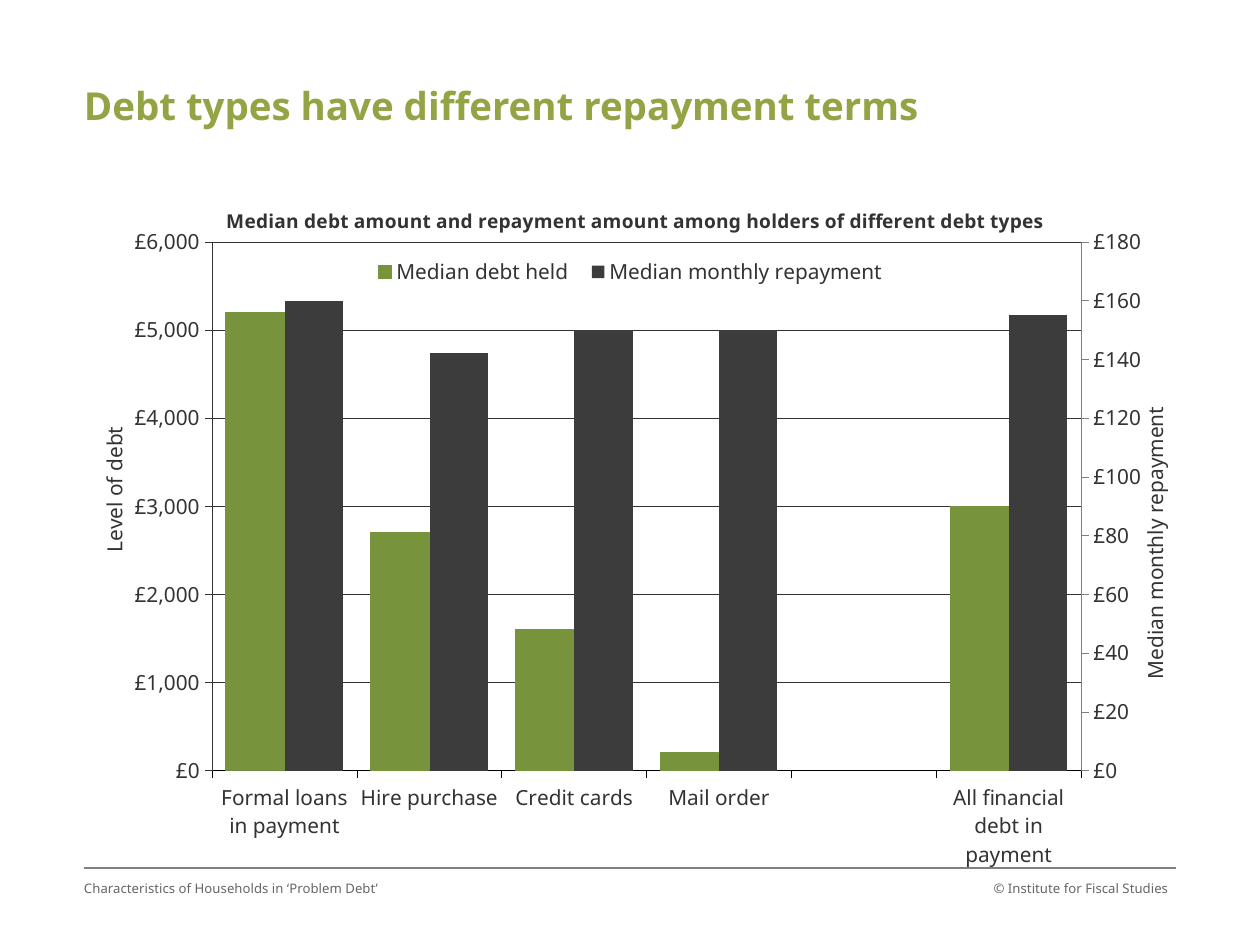
from copy import deepcopy
from dataclasses import dataclass

from lxml import etree
from pptx import Presentation
from pptx import util as u
from pptx.chart.data import CategoryChartData
from pptx.dml.color import RGBColor
from pptx.enum import chart as ch, dml, shapes, text
from pptx.oxml import parse_xml
from pptx.oxml.ns import nsdecls, qn


@dataclass(frozen=True)
class Theme:
    font: str = "Noto Sans"
    title: str = "93A445"
    ink: str = "333333"
    axis: str = "000000"
    rule: str = "808080"
    footer: str = "666666"
    bars: tuple = ("77933C", "AFBC21", "336750", "3C3C3C")
    title_pt: float = 22
    heading_pt: float = 11
    chart_pt: float = 12
    footer_pt: float = 7.5


T = Theme()
CATEGORIES = ["Formal loans in payment", "Hire purchase", "Credit cards",
              "Mail order", "", "All financial debt in payment"]
# The two spacer series keep the bars of the two axes side by side.
SERIES = [
    ("Median debt held", [5200, 2700, 1600, 200, None, 3000]),
    ("Series 2", [0] + [None] * 5),
    ("Series 3", [0] + [None] * 5),
    ("Median monthly repayment", [160, 142, 150, 150, None, 155]),
]


def px(n):
    return u.Emu(round(n * 914400 / 126))


def rgb(value):
    return RGBColor.from_string(value)


def style(font, size, color, bold=False):
    font.name, font.size, font.bold = T.font, u.Pt(size), bold
    font.color.rgb = rgb(color)


def add_run(p, words, size, color, bold=False):
    r = p.add_run()
    r.text = words
    style(r.font, size, color, bold)


def set_line(line, color, width):
    line.color.rgb = rgb(color)
    line.width = u.Pt(width)


def set_frame(tf, right=0):
    tf.margin_left = tf.margin_top = tf.margin_bottom = 0
    tf.margin_right = px(right)
    tf.word_wrap = True


def add_title(s, x, y, w, h):
    sp = s.shapes.title
    sp.left, sp.top, sp.width, sp.height = map(px, (x, y, w, h))
    tf = sp.text_frame
    set_frame(tf)
    tf.vertical_anchor = text.MSO_ANCHOR.MIDDLE
    p = tf.paragraphs[0]
    p.alignment = text.PP_ALIGN.LEFT
    add_run(p, "Debt types have different repayment terms",
            T.title_pt, T.title, True)


def add_footer(s, x, y, w, h):
    rule = s.shapes.add_connector(shapes.MSO_CONNECTOR.STRAIGHT,
                                  px(x), px(y), px(x + w), px(y))
    set_line(rule.line, T.rule, 0.75)
    etree.SubElement(rule._element.spPr, qn("a:effectLst"))
    half = w // 2
    notes = [("Characteristics of Households in ‘Problem Debt’",
              text.PP_ALIGN.LEFT, 0),
             ("© Institute for Fiscal Studies", text.PP_ALIGN.RIGHT, 8)]
    for i, (words, align, inset) in enumerate(notes):
        tf = s.shapes.add_textbox(px(x + i * half), px(y + 12),
                                  px(half), px(h - 12)).text_frame
        set_frame(tf, inset)
        p = tf.paragraphs[0]
        p.alignment = align
        add_run(p, words, T.footer_pt, T.footer)


def set_layout(el, index, x, y, w=None, h=None, inner=False):
    """Place a chart part by hand, in fractions of the chart."""
    for old in el.findall(qn("c:layout")):
        el.remove(old)
    values = [("xMode", "edge"), ("yMode", "edge"), ("x", x), ("y", y)]
    if inner:
        values.insert(0, ("layoutTarget", "inner"))
    if w:
        values += [("w", w), ("h", h)]
    body = "".join(f'<c:{tag} val="{v}"/>' for tag, v in values)
    el.insert(index, parse_xml(
        f'<c:layout {nsdecls("c")}><c:manualLayout>{body}'
        '</c:manualLayout></c:layout>'))


def set_axis_title(axis, words, x, y):
    tf = axis.axis_title.text_frame
    add_run(tf.paragraphs[0], words, T.chart_pt, T.ink)
    title = axis.axis_title._element
    body = title.find(".//" + qn("a:bodyPr"))
    body.set("rot", "-5400000")
    body.set("vert", "horz")
    set_layout(title, 1, x, y)


def format_value_axis(axis, top, step, color):
    axis.minimum_scale, axis.maximum_scale, axis.major_unit = 0, top, step
    axis.major_tick_mark = ch.XL_TICK_MARK.OUTSIDE
    axis.tick_labels.number_format = "\\£#,##0"
    axis.tick_labels.number_format_is_linked = False
    set_line(axis.format.line, color, 0.25)


def add_right_axis(chart):
    """Move the last two series to a second pair of axes."""
    area = chart._chartSpace.chart.plotArea
    left = area.find(qn("c:barChart"))
    right = deepcopy(left)
    left.addnext(right)
    for bars, drop in ((left, slice(2, 4)), (right, slice(0, 2))):
        for ser in bars.findall(qn("c:ser"))[drop]:
            bars.remove(ser)
    first_val = area.find(qn("c:valAx"))
    cat, val = deepcopy(area.find(qn("c:catAx"))), deepcopy(first_val)
    ids = ("50010", "50020")
    for el, own, other in ((cat, *ids), (val, *ids[::-1])):
        el.find(qn("c:axId")).set("val", own)
        el.find(qn("c:crossAx")).set("val", other)
    first_val.addnext(cat)
    cat.addnext(val)
    for el, own in zip(right.findall(qn("c:axId")), ids):
        el.set("val", own)
    cat.find(qn("c:delete")).set("val", "1")
    val.find(qn("c:axPos")).set("val", "r")
    val.find(qn("c:crosses")).set("val", "max")
    return type(chart.value_axis)(val)


def add_debt_chart(s, x, y, w, h):
    data = CategoryChartData()
    data.categories = CATEGORIES
    for name, values in SERIES:
        data.add_series(name, values)
    chart = s.shapes.add_chart(ch.XL_CHART_TYPE.COLUMN_CLUSTERED,
                               *map(px, (x, y, w, h)), data).chart
    style(chart.font, T.chart_pt, T.ink)
    plot = chart.plots[0]
    plot.gap_width, plot.overlap, plot.vary_by_categories = 48, -1, False
    for ser, color in zip(plot.series, T.bars):
        ser.format.fill.solid()
        ser.format.fill.fore_color.rgb = rgb(color)
    set_line(plot.series[0].format.line, T.bars[0], 0.75)

    cat = chart.category_axis
    cat.major_tick_mark = ch.XL_TICK_MARK.OUTSIDE
    set_line(cat.format.line, T.axis, 0.25)
    val = chart.value_axis
    format_value_axis(val, 6000, 1000, T.ink)
    right = add_right_axis(chart)
    right.has_major_gridlines = False
    format_value_axis(right, 180, 20, T.rule)
    grid = val.major_gridlines.format.line
    set_line(grid, T.ink, 0.25)
    grid.dash_style = dml.MSO_LINE.ROUND_DOT
    set_axis_title(val, "Level of debt", 0, 0.34)
    set_axis_title(right, "Median monthly repayment", 0.97, 0.31)

    add_run(chart.chart_title.text_frame.paragraphs[0],
            "Median debt amount and repayment amount among holders of "
            "different debt types", T.heading_pt, T.ink, True)
    set_layout(chart.chart_title._element, 1, 0.12, 0.01)
    set_layout(chart._chartSpace.chart.plotArea, 0,
               0.11, 0.07, 0.81, 0.79, inner=True)

    chart.has_legend = True
    chart.legend.position = ch.XL_LEGEND_POSITION.TOP
    chart.legend.include_in_layout = True
    style(chart.legend.font, T.chart_pt, T.ink)
    legend = chart.legend._element
    for i in (1, 2):
        legend.insert(i, parse_xml(
            f'<c:legendEntry {nsdecls("c")}><c:idx val="{i}"/>'
            '<c:delete val="1"/></c:legendEntry>'))
    set_layout(legend, 3, 0.25, 0.09, 0.5, 0.05)


def main():
    prs = Presentation()
    prs.slide_width, prs.slide_height = px(1260), px(945)
    s = prs.slides.add_slide(prs.slide_layouts[5])
    add_title(s, 84, 78, 903, 55)
    add_footer(s, 84, 868, 1092, 63)
    add_debt_chart(s, 94, 195, 1082, 674)
    prs.save("out.pptx")


if __name__ == "__main__":
    main()
